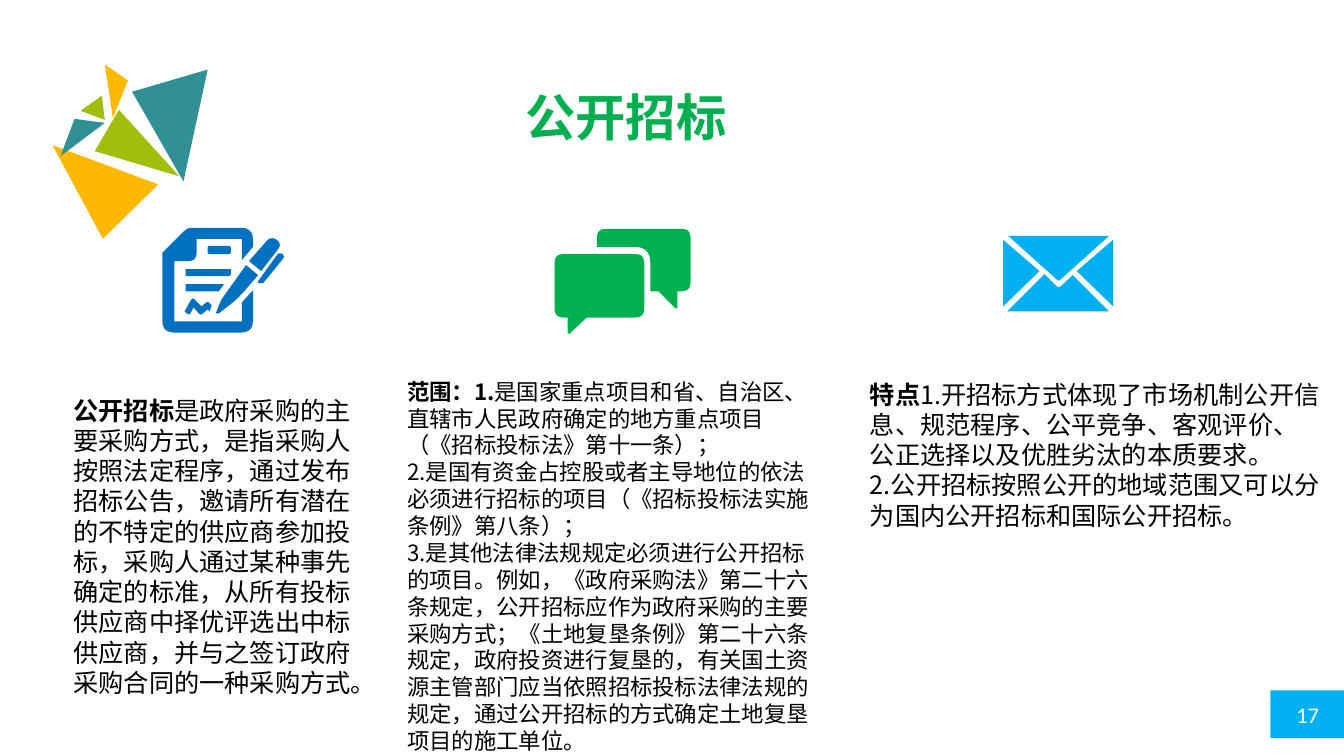
import math

import pptx
import pptx.dml.color
import pptx.enum.shapes
import pptx.enum.text
import pptx.oxml
import pptx.oxml.ns
import pptx.util
from pptx.util import Inches

RGBColor = pptx.dml.color.RGBColor
TEAL = RGBColor(0x31, 0x90, 0x95)
LIME = RGBColor(0xA0, 0xBF, 0x0D)
AMBER = RGBColor(0xFD, 0xB9, 0x00)
BLUE = RGBColor(0x00, 0x70, 0xC0)
GREEN = RGBColor(0x00, 0xB0, 0x50)
SKY = RGBColor(0x00, 0xB0, 0xF0)
BLACK = RGBColor(0, 0, 0)
WHITE = RGBColor(0xFF, 0xFF, 0xFF)
CJK = "Noto Sans CJK SC"

TRIANGLES = [
    (TEAL, [(1.31, 0.91), (2.06, 0.69), (1.82, 1.8)]),
    (LIME, [(1.18, 1.09), (0.94, 1.5), (1.78, 1.75)]),
    (AMBER, [(0.52, 1.44), (1.57, 1.83), (1.02, 2.37)]),
    (TEAL, [(0.74, 1.18), (1.04, 1.22), (0.6, 1.55)]),
    (LIME, [(1.01, 0.95), (0.8, 1.1), (1.04, 1.19)]),
    (AMBER, [(1.04, 0.64), (1.27, 0.8), (1.12, 1.17)]),
]
CONTRACT = [
    [(2.4, 2.58), (2.4, 2.37), (1.95, 2.37), (1.95, 2.59, 0.08), (1.73, 2.59),
     (1.73, 3.19), (2.4, 3.19), (2.4, 3), (2.51, 2.88), (2.51, 3.3, 0.12),
     (1.61, 3.3, 0.12), (1.61, 2.51), (1.86, 2.26, 0.05), (2.51, 2.26, 0.12),
     (2.51, 2.45)],
    [(2.44, 2.63), (2.56, 2.73), (2.36, 2.96, 0.08), (2.17, 3.11), (2.14, 3.11),
     (2.19, 2.98, 0.04)],
    [(2.47, 2.59), (2.69, 2.34, 0.07), (2.8, 2.42, 0.07), (2.59, 2.69)],
    [(2.56, 2.79), (2.77, 2.5, 0.04), (2.83, 2.54, 0.04), (2.61, 2.81), (2.56, 2.81)],
    [(1.84, 2.67), (2.29, 2.67), (2.29, 2.74, 0.03), (1.84, 2.74)],
    [(1.84, 2.82), (2.22, 2.82), (2.17, 2.89), (1.84, 2.89)],
    [(2.06, 2.44, 0.02), (2.29, 2.44, 0.02), (2.29, 2.52, 0.02), (2.06, 2.52, 0.02)],
    [(1.83, 3.09), (1.91, 2.95, 0.03), (2, 3.04), (2.06, 2.99, 0.02), (2.1, 3.03),
     (2.08, 3.09), (2.06, 3.07), (1.99, 3.13, 0.03), (1.92, 3.05), (1.88, 3.13, 0.03)],
]
BUBBLES = [
    [(5.5, 2.52, 0.09), (6.39, 2.52, 0.09), (6.39, 3.15, 0.09), (5.82, 3.15),
     (5.65, 3.31), (5.63, 3.31), (5.63, 3.15), (5.5, 3.15, 0.09)],
    [(5.92, 2.27, 0.09), (6.85, 2.27, 0.09), (6.85, 2.89, 0.09), (6.72, 2.89),
     (6.72, 3.06), (6.7, 3.06), (6.53, 2.89), (6.45, 2.89), (6.45, 2.45, 0.15),
     (5.92, 2.45)],
]
ENVELOPE = [
    [(10, 2.34), (11, 2.34), (10.5, 2.79, 0.02)],
    [(10.36, 2.72), (10.5, 2.86, 0.03), (10.64, 2.73), (11, 3.09), (9.99, 3.09)],
    [(9.95, 2.38), (10.31, 2.69), (9.95, 3.04)],
    [(11.04, 2.38), (10.68, 2.69), (11.04, 3.04)],
]

DEFINITION = [
    ("公开招标", "是政府采购的主要采购方式，是指采购人按照法定程序，通过发布招标公告，邀请所有潜在的不特定的供应商参加投标，采购人通过某种事先确定的标准，从所有投标供应商中择优评选出中标供应商，并与之签订政府采购合同的一种采购方式。"),
]
SCOPE = [
    ("范围：1.", "是国家重点项目和省、自治区、直辖市人民政府确定的地方重点项目（《招标投标法》第十一条）；"),
    ("", "2.是国有资金占控股或者主导地位的依法必须进行招标的项目（《招标投标法实施条例》第八条）；"),
    ("", "3.是其他法律法规规定必须进行公开招标的项目。例如，《政府采购法》第二十六条规定，公开招标应作为政府采购的主要采购方式；《土地复垦条例》第二十六条规定，政府投资进行复垦的，有关国土资源主管部门应当依照招标投标法律法规的规定，通过公开招标的方式确定土地复垦项目的施工单位。"),
]
FEATURES = [
    ("特点", "1.开招标方式体现了市场机制公开信息、规范程序、公平竞争、客观评价、公正选择以及优胜劣汰的本质要求。"),
    ("", "2.公开招标按照公开的地域范围又可以分为国内公开招标和国际公开招标。"),
]


def paint(s, color):
    s.shadow.inherit = False
    s.fill.solid()
    s.fill.fore_color.rgb = color
    s.line.fill.background()


def toward(start, end, distance):
    share = distance / math.dist(start, end)
    return tuple(a + (b - a) * share for a, b in zip(start, end))


def round_corners(corners, steps=5):
    points = []
    for i, (x, y, *radius) in enumerate(corners):
        if not radius:
            points.append((x, y))
            continue
        a = toward((x, y), corners[i - 1][:2], radius[0])
        b = toward((x, y), corners[(i + 1) % len(corners)][:2], radius[0])
        for t in (n / steps for n in range(steps + 1)):
            points.append(tuple((1 - t) ** 2 * p + 2 * t * (1 - t) * q + t * t * r
                                for p, q, r in zip(a, (x, y), b)))
    return points


def add_outline(slide, corners, color):
    first, *rest = [(Inches(x), Inches(y)) for x, y in round_corners(corners)]
    builder = slide.shapes.build_freeform(*first, scale=1.0)
    builder.add_line_segments(rest, close=True)
    paint(builder.convert_to_shape(), color)


def set_font(p, name, size, color):
    p.font.size = pptx.util.Pt(size)
    p.font.color.rgb = color
    p.font.name = name
    props = p._p.pPr.find(pptx.oxml.ns.qn("a:defRPr"))
    props.append(pptx.oxml.parse_xml(
        f'<a:ea {pptx.oxml.ns.nsdecls("a")} typeface="{name}"/>'))


def add_text(slide, box, paragraphs, size, color=BLACK):
    s = slide.shapes.add_textbox(*map(Inches, box))
    tf = s.text_frame
    tf.word_wrap = True
    for i, (lead, body) in enumerate(paragraphs):
        p = tf.add_paragraph() if i else tf.paragraphs[0]
        p.line_spacing = pptx.util.Pt(size * 1.2)
        set_font(p, CJK, size, color)
        for text, bold in ((lead, True), (body, False)):
            if text:
                r = p.add_run()
                r.text = text
                r.font.bold = bold


def add_page_number(slide, number):
    s = slide.shapes.add_shape(pptx.enum.shapes.MSO_SHAPE.RECTANGLE,
                               Inches(12.6), Inches(6.85), Inches(0.74), Inches(0.47))
    paint(s, SKY)
    tf = s.text_frame
    tf.vertical_anchor = pptx.enum.text.MSO_ANCHOR.MIDDLE
    p = tf.paragraphs[0]
    p.text = number
    p.alignment = pptx.enum.text.PP_ALIGN.CENTER
    set_font(p, "Calibri", 16, WHITE)


def main():
    prs = pptx.Presentation()
    prs.slide_width, prs.slide_height = Inches(13.33), Inches(7.5)
    slide = prs.slides.add_slide(prs.slide_layouts[6])
    add_page_number(slide, "17")
    for color, corners in TRIANGLES:
        add_outline(slide, corners, color)
    for icon, color in ((CONTRACT, BLUE), (BUBBLES, GREEN), (ENVELOPE, SKY)):
        for corners in icon:
            add_outline(slide, corners, color)
    add_text(slide, (5.11, 0.81, 4.75, 0.71), [("公开招标", "")], 36, GREEN)
    add_text(slide, (0.63, 3.87, 2.99, 3.1), DEFINITION, 18)
    add_text(slide, (3.94, 3.7, 4.26, 3.8), SCOPE, 16)
    add_text(slide, (8.53, 3.71, 4.66, 1.6), FEATURES, 18)
    prs.save("out.pptx")


if __name__ == "__main__":
    main()
